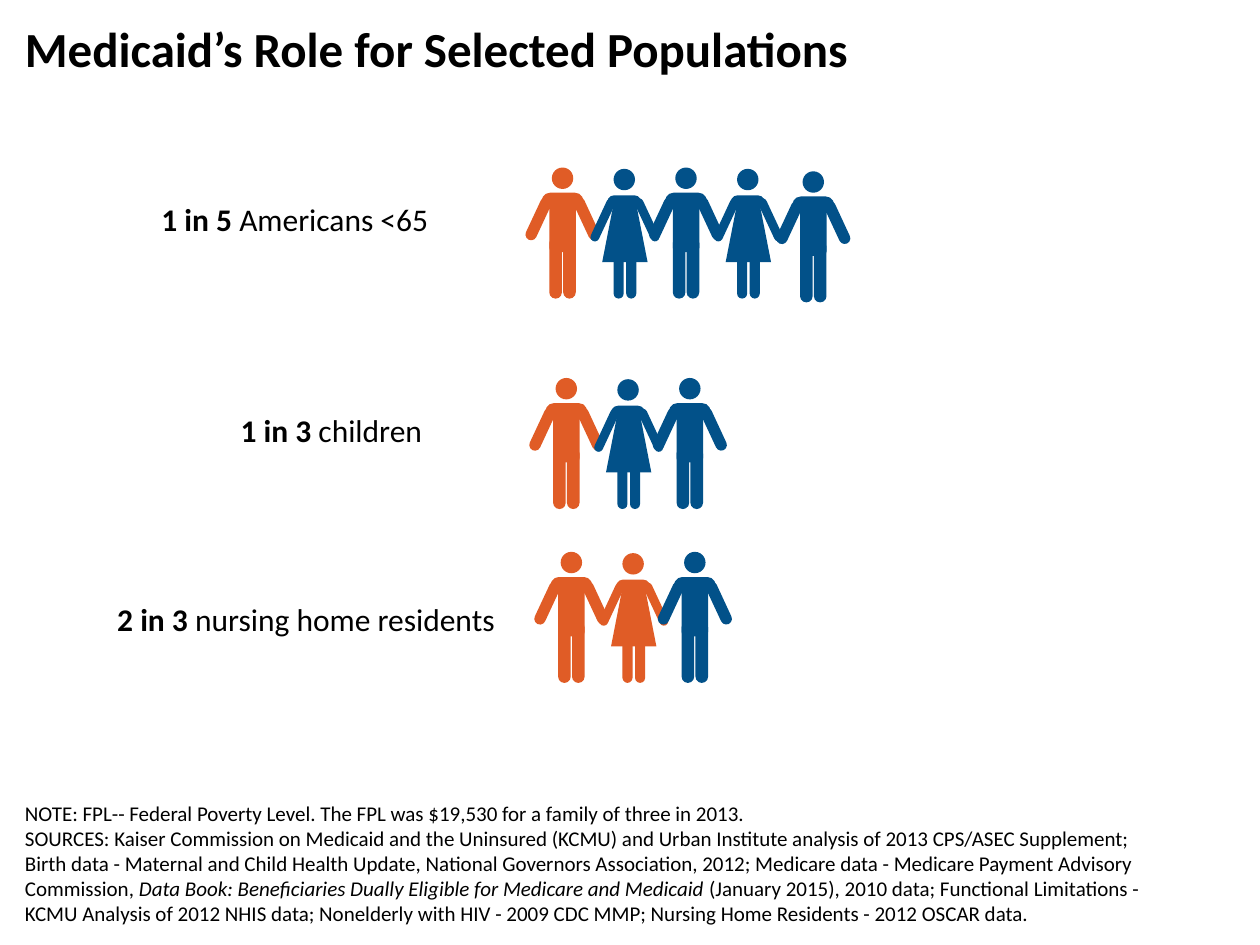
from pptx import Presentation
from pptx.dml.color import RGBColor as RGB
from pptx.enum.shapes import MSO_SHAPE as SHAPE
from pptx.enum.text import MSO_ANCHOR as ANCHOR, PP_ALIGN as ALIGN
from pptx.util import Inches, Pt

COLORS = {"text": "000000", "orange": "E05C26", "blue": "025189"}
PITCH = 0.49

# Each part: shape, offset from the head (x, y), size (w, h), turn, adjustments
MAN = [
    (SHAPE.OVAL, 0, 0, 0.17, 0.17, 0, []),
    (SHAPE.ROUNDED_RECTANGLE, -0.02, 0.55, 0.1, 0.49, 0, [0.5]),
    (SHAPE.ROUNDED_RECTANGLE, 0.09, 0.55, 0.1, 0.49, 0, [0.5]),
    (SHAPE.ROUNDED_RECTANGLE, -0.02, 0.29, 0.21, 0.38, 0, []),
    (SHAPE.ROUND_2_SAME_RECTANGLE, -0.08, 0.2, 0.33, 0.13, 0, [0.5, 0]),
    (SHAPE.ROUNDED_RECTANGLE, -0.29, 0.36, 0.37, 0.09, 295, [0.5]),
    (SHAPE.ROUNDED_RECTANGLE, 0.09, 0.36, 0.37, 0.09, 65, [0.5]),
]
WOMAN = [
    (SHAPE.OVAL, 0, 0.01, 0.17, 0.17, 0, []),
    (SHAPE.ROUNDED_RECTANGLE, 0, 0.63, 0.08, 0.41, 0, [0.5]),
    (SHAPE.ROUNDED_RECTANGLE, 0.1, 0.63, 0.08, 0.41, 0, [0.5]),
    (SHAPE.TRAPEZOID, -0.09, 0.29, 0.36, 0.46, 0, [0.25]),
    (SHAPE.ROUNDED_RECTANGLE, -0.05, 0.22, 0.27, 0.11, 0, [0.5]),
    (SHAPE.ROUNDED_RECTANGLE, -0.27, 0.38, 0.37, 0.07, 295, [0.5]),
    (SHAPE.ROUNDED_RECTANGLE, 0.08, 0.38, 0.37, 0.07, 65, [0.5]),
]

# Each row: label box, bold words, plain words, people as (x, y, colors)
ROWS = [
    ((1.17, 1.54, 2.34, 0.4), "1 in 5 ", "Americans <65",
     [(4.38, 1.33, ["orange", "blue", "blue", "blue"]), (6.37, 1.36, ["blue"])]),
    ((1.8, 3.21, 1.66, 0.4), "1 in 3 ", "children",
     [(4.41, 3.0, ["orange", "blue", "blue"])]),
    ((0.81, 4.71, 3.24, 0.4), "2 in 3 ", "nursing home residents",
     [(4.45, 4.38, ["orange", "orange", "blue"])]),
]

NOTES = [
    [("NOTE: FPL-- Federal Poverty Level. The FPL was $19,530 for a family "
      "of three in 2013.", {})],
    [("SOURCES: Kaiser Commission on Medicaid and the Uninsured (KCMU) and "
      "Urban Institute analysis of 2013 CPS/ASEC Supplement; Birth data - "
      "Maternal and Child Health Update, National Governors Association, "
      "2012; Medicare data - Medicare Payment Advisory Commission, ", {}),
     ("Data Book: Beneficiaries Dually Eligible for Medicare and Medicaid",
      {"italic": True}),
     (" (January 2015), 2010 data; Functional Limitations - KCMU Analysis of "
      "2012 NHIS data; Nonelderly with HIV - 2009 CDC MMP; Nursing Home "
      "Residents - 2012 OSCAR data.", {})],
]


class Board:
    """Holds the style and the current slide."""

    def __init__(self, slide, font="Calibri"):
        self.slide = slide
        self.font = font

    def text(self, box, paras, size, align=ALIGN.LEFT, anchor=ANCHOR.TOP, wrap=True):
        """Add a text box; each paragraph is a list of (words, font values)."""
        frame = self.slide.shapes.add_textbox(*map(Inches, box)).text_frame
        frame.word_wrap = wrap
        frame.vertical_anchor = anchor
        for i, runs in enumerate(paras):
            para = frame.add_paragraph() if i else frame.paragraphs[0]
            para.alignment = align
            for words, style in runs:
                run = para.add_run()
                run.text = words
                values = {"name": self.font, "size": Pt(size), **style}
                for key, value in values.items():
                    setattr(run.font, key, value)
                run.font.color.rgb = RGB.from_string(COLORS["text"])

    def person(self, group, parts, x, y, color):
        for kind, dx, dy, w, h, turn, adjust in parts:
            box = map(Inches, (x + dx, y + dy, w, h))
            shape = group.shapes.add_shape(kind, *box)
            shape.shadow.inherit = False
            shape.rotation = turn
            for i, value in enumerate(adjust):
                shape.adjustments[i] = value
            shape.fill.solid()
            shape.fill.fore_color.rgb = RGB.from_string(COLORS[color])
            shape.line.fill.background()

    def people(self, x, y, colors):
        """Add a group of men and women in turn, hand in hand."""
        group = self.slide.shapes.add_group_shape()
        for i, color in enumerate(colors):
            parts = WOMAN if i % 2 else MAN
            self.person(group, parts, x + i * PITCH, y, color)


def main():
    deck = Presentation()
    deck.slide_width, deck.slide_height = Inches(10), Inches(7.5)
    board = Board(deck.slides.add_slide(deck.slide_layouts[6]))
    title = "Medicaid’s Role for Selected Populations"
    board.text((0.1, 0.1, 9.8, 1), [[(title, {"bold": True})]], 28)
    for box, share, who, groups in ROWS:
        label = [(share, {"bold": True}), (who, {})]
        board.text(box, [label], 18, align=ALIGN.CENTER, wrap=False)
        for group in groups:
            board.people(*group)
    board.text((0.1, 6.8, 9.1, 0.6), NOTES, 12, anchor=ANCHOR.BOTTOM)
    deck.save("out.pptx")


if __name__ == "__main__":
    main()
